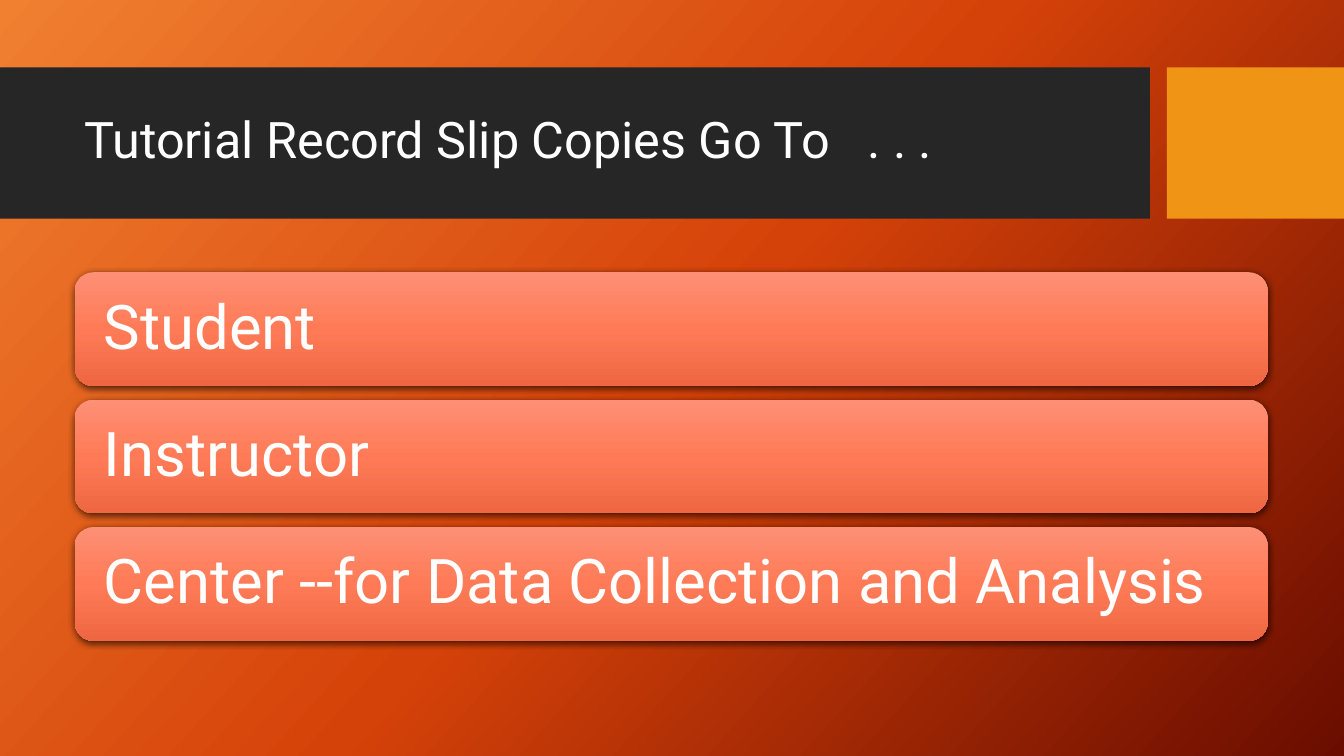
from lxml.etree import SubElement
from pptx import Presentation
from pptx.dml.color import RGBColor
from pptx.enum.shapes import MSO_SHAPE
from pptx.enum.text import MSO_ANCHOR, MSO_AUTO_SIZE, PP_ALIGN
from pptx.oxml.ns import qn
from pptx.util import Cm, Pt

TITLE = "Tutorial Record Slip Copies Go To   . . ."
RECIPIENTS = ["Student", "Instructor", "Center --for Data Collection and Analysis"]
FONT, WHITE = "Roboto", "FFFFFF"
BACKGROUND = [(0, "F18031"), (50, "D54209"), (100, "6A0D00")]
CARD_FILL = [(0, "FD8F75"), (50, "FF7B57"), (100, "EE6742")]
# left, width, colour of each header band
BANDS = [(0, 28.98, "262626"), (29.41, 4.46, "F09415")]
BAND_TOP, BAND_HEIGHT = 1.7, 3.81
CARD_LEFT, CARD_TOP, CARD_WIDTH, CARD_HEIGHT, CARD_GAP = 1.88, 6.86, 30.07, 2.87, 0.34


def rgb(value):
    return RGBColor.from_string(value)


def set_gradient(fill, properties, stops, angle):
    """Replace the fill held in properties with a linear gradient, angle clockwise."""
    fill.solid()
    solid = properties.find(qn("a:solidFill"))
    gradient = SubElement(properties, qn("a:gradFill"), rotWithShape="1")
    stop_list = SubElement(gradient, qn("a:gsLst"))
    for position, colour in stops:
        stop = SubElement(stop_list, qn("a:gs"), pos=str(position * 1000))
        SubElement(stop, qn("a:srgbClr"), val=colour)
    SubElement(gradient, qn("a:lin"), ang=str(angle * 60000), scaled="0")
    properties.replace(solid, gradient)


def add_soft_shadow(shape):
    shape.shadow.inherit = False
    effects = shape._element.spPr.find(qn("a:effectLst"))
    shadow = SubElement(effects, qn("a:outerShdw"), blurRad=str(Pt(4.5)),
                        dist=str(Pt(1.5)), dir="5400000", rotWithShape="0")
    colour = SubElement(shadow, qn("a:srgbClr"), val="000000")
    SubElement(colour, qn("a:alpha"), val="63000")


def write_text(shape, text, size):
    frame = shape.text_frame
    frame.text = text
    frame.word_wrap = True
    frame.auto_size = MSO_AUTO_SIZE.NONE
    frame.vertical_anchor = MSO_ANCHOR.MIDDLE
    paragraph = frame.paragraphs[0]
    paragraph.alignment = PP_ALIGN.LEFT
    paragraph.line_spacing = 0.9
    paragraph.space_before = Pt(0)
    paragraph.font.name = FONT
    paragraph.font.size = Pt(size)
    paragraph.font.color.rgb = rgb(WHITE)


presentation = Presentation()
presentation.slide_width, presentation.slide_height = Cm(33.87), Cm(19.05)
slide = presentation.slides.add_slide(presentation.slide_layouts[5])
background_fill = slide.background.fill
background_fill.solid()
set_gradient(background_fill, slide._element.cSld.bg.bgPr, BACKGROUND, 42)

for left, width, colour in BANDS:
    band = slide.shapes.add_shape(MSO_SHAPE.RECTANGLE, Cm(left), Cm(BAND_TOP),
                                  Cm(width), Cm(BAND_HEIGHT))
    band.shadow.inherit = False
    band.fill.solid()
    band.fill.fore_color.rgb = rgb(colour)
    band.line.fill.background()

title = slide.shapes.title
title.left, title.top, title.width, title.height = Cm(1.88), Cm(2.08), Cm(26.7), Cm(3)
write_text(title, TITLE, 36)
slide.shapes._spTree.append(title._element)  # bring in front of the bands

for index, recipient in enumerate(RECIPIENTS):
    top = CARD_TOP + index * (CARD_HEIGHT + CARD_GAP)
    card = slide.shapes.add_shape(MSO_SHAPE.ROUNDED_RECTANGLE, Cm(CARD_LEFT), Cm(top),
                                  Cm(CARD_WIDTH), Cm(CARD_HEIGHT))
    set_gradient(card.fill, card._element.spPr, CARD_FILL, 90)
    card.line.fill.background()
    add_soft_shadow(card)
    card.text_frame.margin_left = card.text_frame.margin_right = Cm(0.6)
    write_text(card, recipient, 44)

presentation.save("out.pptx")
